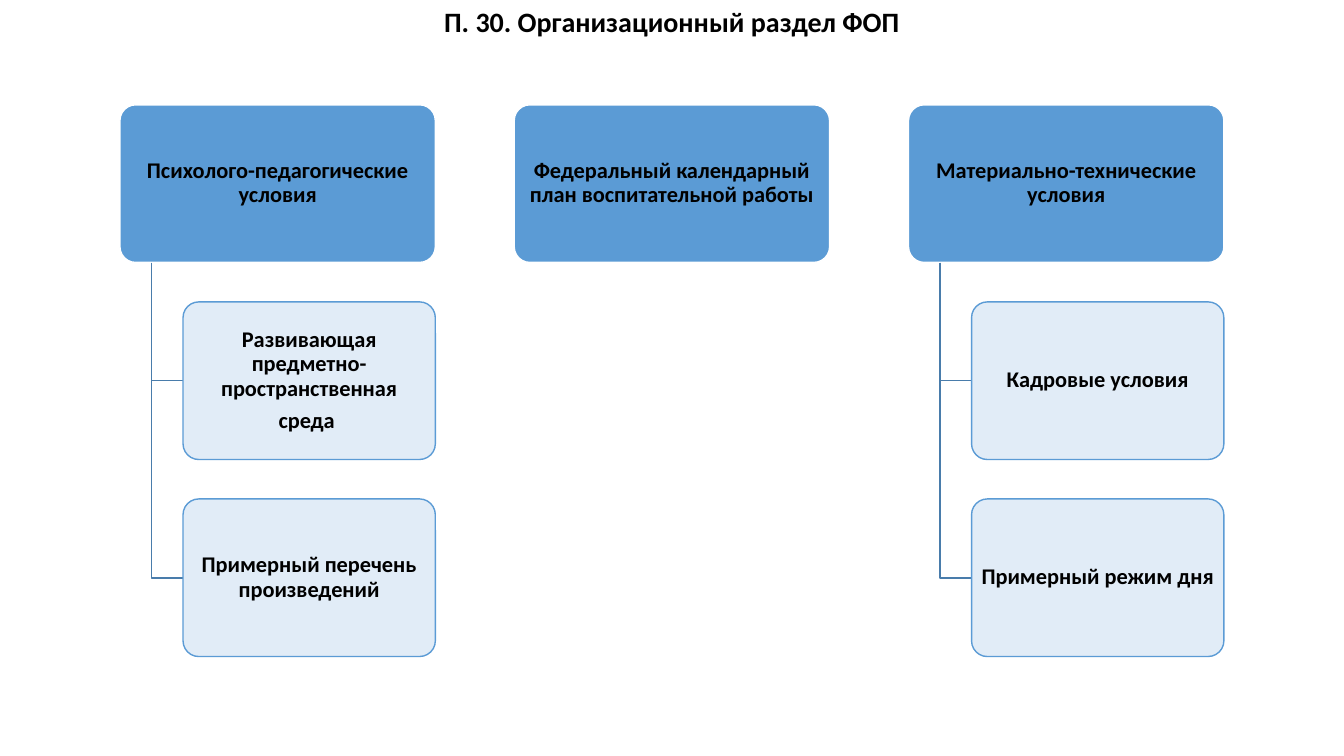
from pptx import Presentation
from pptx.dml.color import RGBColor
from pptx.enum.shapes import MSO_SHAPE as Preset
from pptx.enum.text import MSO_ANCHOR as Anchor, PP_ALIGN as Align
from pptx.oxml.ns import qn
from pptx.util import Pt
from lxml.etree import SubElement

COLORS = {"text": "000000", "head": "5B9BD5", "white": "FFFFFF",
          "child": "DEEBF7", "branch": "497CAB"}

LEFT, TOP = 85.7, 74.9
HEAD_WIDTH, HEIGHT = 225.3, 112.6
COLUMN_STEP, ROW_STEP = HEAD_WIDTH * 1.25, HEIGHT * 1.25
BRANCH_INDENT = HEAD_WIDTH / 10
CHILD_WIDTH = HEAD_WIDTH * 0.8

COLUMNS = [
    ("Психолого-педагогические условия",
     ["Развивающая предметно-пространственная\nсреда ",
      "Примерный перечень произведений"]),
    ("Федеральный календарный план воспитательной работы", []),
    ("Материально-технические условия",
     ["Кадровые условия", "Примерный режим дня"]),
]


def write_text(box, text, size=16, anchor=Anchor.MIDDLE, space_after=5.6,
               side=2.2, top=1.4):
    frame = box.text_frame
    frame.word_wrap = True
    frame.vertical_anchor = anchor
    frame.margin_left = frame.margin_right = Pt(side)
    frame.margin_top = frame.margin_bottom = Pt(top)
    frame.text = text
    for para in frame.paragraphs:
        para.alignment = Align.CENTER
        para.line_spacing = 0.9
        para.space_after = Pt(space_after)
        for span in para.runs:
            span.font.name = "Calibri"
            span.font.size = Pt(size)
            span.font.bold = True
            span.font.color.rgb = RGBColor.from_string(COLORS["text"])


def add_card(page, text, left, top, width, fill, line):
    card = page.shapes.add_shape(Preset.ROUNDED_RECTANGLE, Pt(left), Pt(top),
                                 Pt(width), Pt(HEIGHT))
    card.adjustments[0] = 0.1
    card.shadow.inherit = False
    card.fill.solid()
    card.fill.fore_color.rgb = RGBColor.from_string(COLORS[fill])
    card.line.color.rgb = RGBColor.from_string(COLORS[line])
    card.line.width = Pt(1)
    write_text(card, text)
    return card


deck = Presentation()
deck.slide_width, deck.slide_height = Pt(960), Pt(540)
page = deck.slides.add_slide(deck.slide_layouts[6])

# Title
title = page.shapes.add_textbox(Pt(66), Pt(0), Pt(828), Pt(57.6))
write_text(title, "П. 30. Организационный раздел ФОП", size=20,
           anchor=Anchor.TOP, space_after=0, side=7.2, top=6)

# Columns: a heading card with its branches and child cards
for column, (heading, children) in enumerate(COLUMNS):
    left = LEFT + column * COLUMN_STEP
    add_card(page, heading, left, TOP, HEAD_WIDTH, "head", "white")
    trunk = left + BRANCH_INDENT
    child_left = trunk + BRANCH_INDENT
    for row, label in enumerate(children, start=1):
        top = TOP + row * ROW_STEP
        middle = top + HEIGHT / 2

        # Branch from the heading down to the child
        path_builder = page.shapes.build_freeform(Pt(trunk), Pt(TOP + HEIGHT))
        path_builder.add_line_segments(
            [(Pt(trunk), Pt(middle)), (Pt(child_left), Pt(middle))], close=False)
        branch = path_builder.convert_to_shape()
        branch.shadow.inherit = False
        branch.fill.background()
        branch.line.color.rgb = RGBColor.from_string(COLORS["branch"])
        branch.line.width = Pt(1)

        # Child card, slightly transparent
        child = add_card(page, label, child_left, top, CHILD_WIDTH, "child", "head")
        tint = child.fill._xPr.find(qn("a:solidFill"))[0]
        SubElement(tint, qn("a:alpha")).set("val", "90000")

deck.save("out.pptx")
